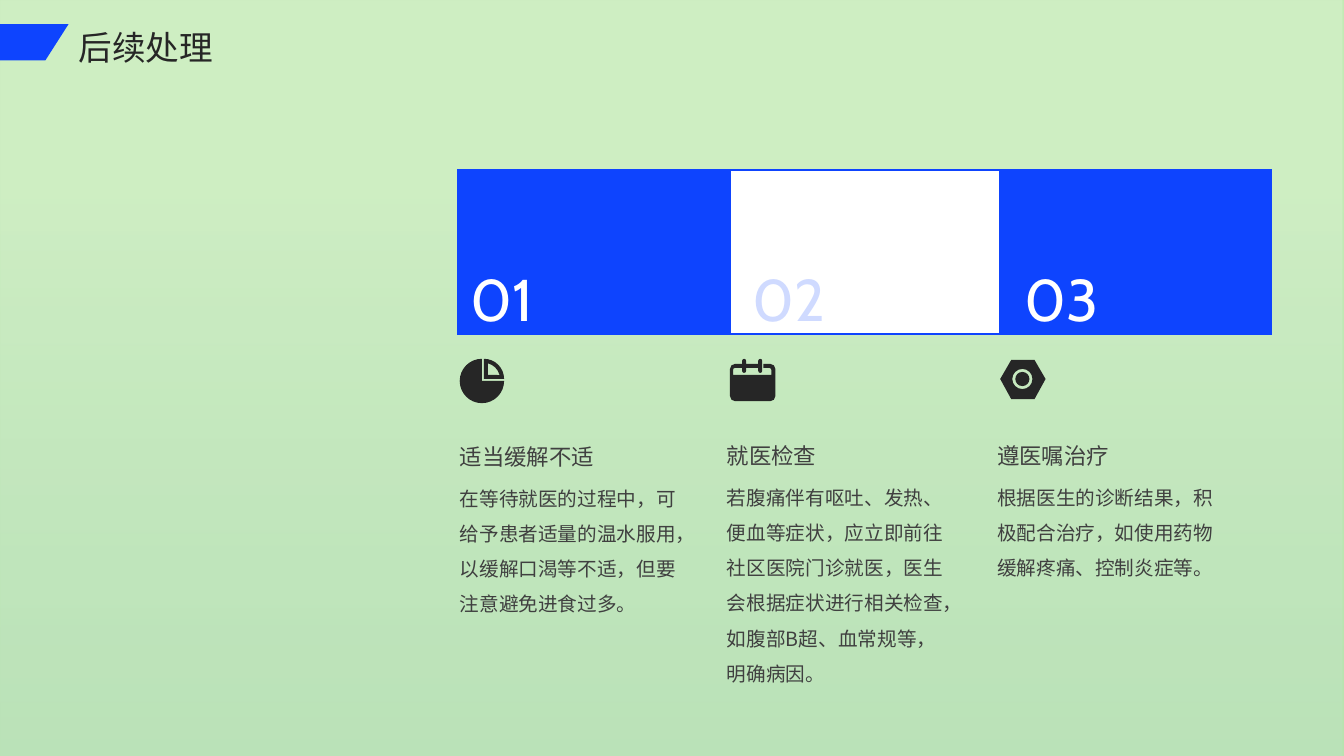
import math

from pptx import Presentation
from pptx.dml.color import RGBColor
from pptx.enum.shapes import MSO_SHAPE
from pptx.enum.text import MSO_ANCHOR, MSO_AUTO_SIZE
from pptx.oxml.ns import qn
from pptx.util import Inches, Pt

RECTANGLE = MSO_SHAPE.RECTANGLE
TOP, MIDDLE = MSO_ANCHOR.TOP, MSO_ANCHOR.MIDDLE
GROW = MSO_AUTO_SIZE.SHAPE_TO_FIT_TEXT
CJK_FONT, NUMBER_FONT = "Noto Sans CJK SC", "Cabin"
BLUE, WHITE, PALE_BLUE = "0E44FE", "FFFFFF", "CFDAFF"
BLACK, GREY = "262626", "404040"

CARD_TOP, CARD_WIDTH, CARD_HEIGHT = 1.69, 2.68, 1.62
TEXT_WIDTH = 2.22

# card left, fill, border; number, its left and colour; text left and top, heading, body
STEPS = [
    (4.55, BLUE, 2, "01", 4.67, WHITE, 4.56, 4.21, "适当缓解不适",
     "在等待就医的过程中，可给予患者适量的温水服用，以缓解口渴等不适，但要注意避免进食过多。"),
    (7.24, WHITE, 1.5, "02", 7.46, PALE_BLUE, 7.21, 4.2, "就医检查",
     "若腹痛伴有呕吐、发热、便血等症状，应立即前往社区医院门诊就医，医生会根据症状进行相关检查，"
     "如腹部B超、血常规等，明确病因。"),
    (9.92, BLUE, 2, "03", 10.16, WHITE, 9.89, 4.2, "遵医嘱治疗",
     "根据医生的诊断结果，积极配合治疗，如使用药物缓解疼痛、控制炎症等。"),
]


def rgb(color):
    return RGBColor.from_string(color)


def arc(x, y, radius, start, end):
    """Start point, then one (control, control, end) curve per quarter circle.

    Degrees run clockwise from the right.
    """
    count = math.ceil(abs(end - start) / 90)
    step = math.radians(end - start) / count
    handle = 4 / 3 * math.tan(step / 4)

    def at(angle, pull):
        return (x + radius * (math.cos(angle) - pull * math.sin(angle)),
                y + radius * (math.sin(angle) + pull * math.cos(angle)))

    angles = [math.radians(start) + i * step for i in range(count + 1)]
    curves = [(at(a, handle), at(b, -handle), at(b, 0)) for a, b in zip(angles, angles[1:])]
    return [at(angles[0], 0)] + curves


def box(left, top, right, bottom):
    return [(left, top), (right, top), (right, bottom), (left, bottom)]


def is_curve(item):
    return len(item) == 3


def add_outline(slide, contours, color):
    """One filled shape; a contour inside another cuts a hole."""
    builder = None
    for contour in contours:
        points = []
        for item in contour:
            points.extend(item if is_curve(item) else [item])
        first, *rest = [(Inches(x), Inches(y)) for x, y in points]
        if builder is None:
            builder = slide.shapes.build_freeform(*first)
        else:
            builder.move_to(*first)
        builder.add_line_segments(rest, close=True)
    outline = builder.convert_to_shape()
    outline.shadow.inherit = False
    outline.fill.solid()
    outline.fill.fore_color.rgb = rgb(color)
    outline.line.fill.background()

    # Join each run of three curve points into one Bezier segment
    segments = iter(list(outline._element.spPr.iter(qn("a:lnTo"))))
    for item in [item for contour in contours for item in contour[1:]]:
        segment = next(segments)
        if is_curve(item):
            curve = segment.makeelement(qn("a:cubicBezTo"), {})
            segment.addprevious(curve)
            for part in (segment, next(segments), next(segments)):
                curve.append(part[0])
                part.getparent().remove(part)


def add_rectangle(slide, left, top, width, height):
    rectangle = slide.shapes.add_shape(
        RECTANGLE, Inches(left), Inches(top), Inches(width), Inches(height))
    rectangle.shadow.inherit = False
    return rectangle


def add_background(slide):
    slide.background.fill.solid()
    slide.background.fill.fore_color.rgb = rgb("B4E5A2")
    veil = add_rectangle(slide, 0, 0, 13.33, 7.5)
    veil.line.fill.background()
    veil.fill.gradient()
    veil.fill.gradient_angle = 90
    stops = [(0, PALE_BLUE, 23), (0.76, WHITE, 35)]
    for stop, (position, color, _) in zip(veil.fill.gradient_stops, stops):
        stop.position = position
        stop.color.rgb = rgb(color)
    for color_element, (_, _, opacity) in zip(veil._element.spPr.iter(qn("a:srgbClr")), stops):
        alpha = color_element.makeelement(qn("a:alpha"), {"val": str(opacity * 1000)})
        color_element.append(alpha)


def add_card(slide, left, fill, border):
    card = add_rectangle(slide, left, CARD_TOP, CARD_WIDTH, CARD_HEIGHT)
    card.fill.solid()
    card.fill.fore_color.rgb = rgb(fill)
    card.line.color.rgb = rgb(BLUE)
    card.line.width = Pt(border)
    stroke = card._element.spPr.find(qn("a:ln"))
    stroke.append(stroke.makeelement(qn("a:miter"), {"lim": "800000"}))


def add_text(slide, left, top, width, height, text, size, color,
             font=CJK_FONT, anchor=MIDDLE, spacing=1.5, inset=0):
    text_box = slide.shapes.add_textbox(
        Inches(left), Inches(top), Inches(width), Inches(height))
    frame = text_box.text_frame
    frame.word_wrap = True
    frame.vertical_anchor = anchor
    frame.margin_left = frame.margin_right = Inches(inset)
    frame.margin_top = frame.margin_bottom = Inches(inset / 2)
    paragraph = frame.paragraphs[0]
    paragraph.line_spacing = spacing
    run = paragraph.add_run()
    run.text = text
    run.font.size = Pt(size)
    run.font.color.rgb = rgb(color)
    run.font.name = font
    properties = run._r.get_or_add_rPr()
    properties.append(properties.makeelement(qn("a:ea"), {"typeface": font}))
    return frame


def add_icons(slide):
    # Pie chart with a lifted quarter
    pie = [
        arc(4.78, 3.78, 0.22, 0, 270) + [(4.78, 3.78)],
        arc(4.8, 3.76, 0.2, -90, 0) + [(4.8, 3.76)],
        arc(4.8, 3.76, 0.16, -76, -14) + [(4.84, 3.72)],
    ]
    # Calendar: body, top bar and two rings
    body = ([(7.36, 3.61), (7.36, 3.65)] + arc(7.29, 3.67, 0.02, 270, 180)
            + [(7.27, 3.72), (7.65, 3.72)] + arc(7.63, 3.67, 0.02, 0, -90)
            + [(7.57, 3.65), (7.57, 3.61)]
            + arc(7.64, 3.66, 0.05, -90, 0) + arc(7.64, 3.93, 0.05, 0, 90)
            + arc(7.29, 3.93, 0.05, 90, 180) + arc(7.29, 3.66, 0.05, 180, 270))
    rings = [arc(x, 3.58, 0.02, 180, 360) + arc(x, 3.68, 0.02, 0, 180)
             for x in (7.38, 7.54)]
    calendar = [body, box(7.4, 3.61, 7.52, 3.65)] + rings
    # Hexagonal nut
    nut = [
        [(10.03, 3.57), (10.26, 3.57), (10.37, 3.76),
         (10.26, 3.96), (10.03, 3.96), (9.92, 3.76)],
        arc(10.14, 3.76, 0.1, 0, 360),
        arc(10.14, 3.76, 0.07, 0, 360),
    ]
    for icon in (pie, calendar, nut):
        add_outline(slide, icon, BLACK)


def main():
    presentation = Presentation()
    presentation.slide_width = Inches(13.33)
    presentation.slide_height = Inches(7.5)
    slide = presentation.slides.add_slide(presentation.slide_layouts[6])
    add_background(slide)

    # Cards, the white middle one on top
    for column in (2, 0, 1):
        add_card(slide, *STEPS[column][:3])
    add_icons(slide)

    # Numbers, headings and descriptions
    for _, _, _, number, number_left, number_color, left, top, heading, body in STEPS:
        add_text(slide, number_left, 2.38, TEXT_WIDTH, 0.8, number, 42, number_color,
                 font=NUMBER_FONT)
        add_text(slide, left, top, TEXT_WIDTH, 0.5, heading, 16, GREY)
        add_text(slide, left, top + 0.5, TEXT_WIDTH, 2.01, body, 14, GREY, anchor=TOP)

    # Title with its blue tab
    add_outline(slide, [[(0, 0.24), (0.68, 0.24), (0.45, 0.6), (0, 0.6)]], BLUE)
    title = add_text(slide, 0.68, 0.18, 11.71, 0.46, "后续处理", 24, BLACK,
                     anchor=TOP, spacing=1.1, inset=0.1)
    title.auto_size = GROW

    presentation.save("out.pptx")


if __name__ == "__main__":
    main()
